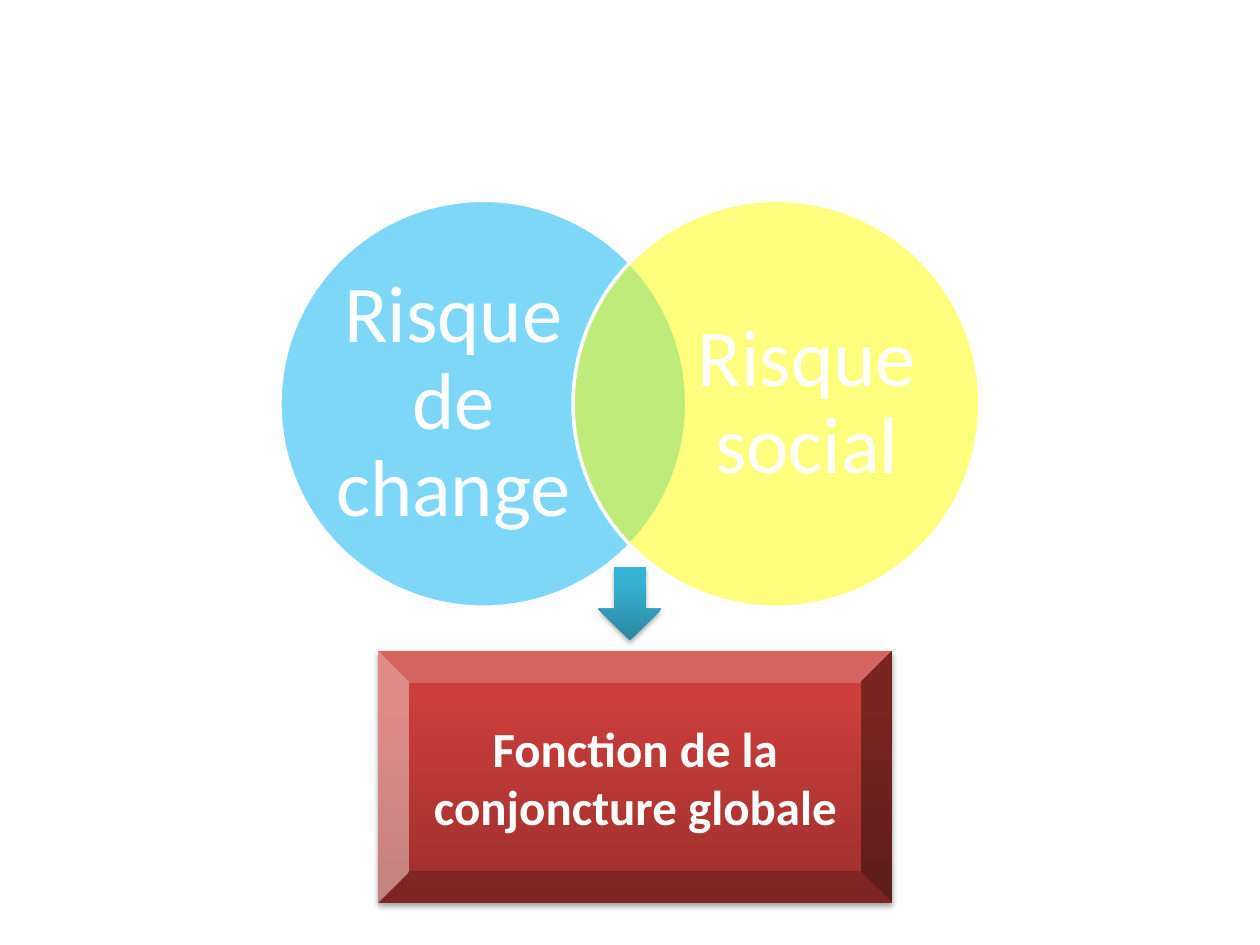
from lxml import etree
from pptx import Presentation
from pptx.dml.color import RGBColor
from pptx.enum import shapes, text
from pptx.oxml import ns
from pptx.util import Pt

WHITE = RGBColor(0xFF, 0xFF, 0xFF)
BLACK = RGBColor(0x00, 0x00, 0x00)
SKY = RGBColor(0x00, 0xB0, 0xF0)
YELLOW = RGBColor(0xFF, 0xFF, 0x00)
TEALS = [(0, RGBColor(0x2A, 0x88, 0xA2)), (80, RGBColor(0x37, 0xB1, 0xD2)),
         (100, RGBColor(0x34, 0xB4, 0xD6))]
REDS = [(0, RGBColor(0x9C, 0x2F, 0x2D)), (80, RGBColor(0xCB, 0x3E, 0x3A)),
        (100, RGBColor(0xCE, 0x3B, 0x37))]

CIRCLE_TOP, DIAMETER = 114.5, 232.5
LABEL_TOP, LABEL_WIDTH, LABEL_HEIGHT = 141.84, 134, 177.84


def add_child(parent, tag, **attributes):
    """Append a DrawingML element and return it."""
    child = etree.SubElement(parent, ns.qn(tag))
    for key, value in attributes.items():
        child.set(key, str(value))
    return child


def add_colour(parent, colour, alpha=None):
    """Append an RGB colour, with its opacity in percent if given."""
    element = add_child(parent, "a:srgbClr", val=colour)
    if alpha is not None:
        add_child(element, "a:alpha", val=alpha * 1000)


def write(frame, words, size, bold=False):
    """Write one centred white paragraph in the middle of a frame."""
    frame.word_wrap = True
    frame.vertical_anchor = text.MSO_ANCHOR.MIDDLE
    paragraph = frame.paragraphs[0]
    paragraph.alignment = text.PP_ALIGN.CENTER
    run = paragraph.add_run()
    run.text = words
    run.font.name = "Calibri"
    run.font.size = Pt(size)
    run.font.bold = bold
    run.font.color.rgb = WHITE
    return paragraph


def add_circle(slide, left, colour):
    """Add a half-transparent circle with a white outline."""
    circle = slide.shapes.add_shape(
        shapes.MSO_SHAPE.OVAL, Pt(left), Pt(CIRCLE_TOP), Pt(DIAMETER), Pt(DIAMETER))
    circle.shadow.inherit = False
    circle.fill.solid()
    circle.fill.fore_color.rgb = colour
    solid = circle.fill.fore_color
    solid.rgb = colour
    rgb = circle.element.spPr.find(ns.qn("a:solidFill"))[0]
    add_child(rgb, "a:alpha", val=50000)
    circle.line.color.rgb = WHITE
    circle.line.width = Pt(2)


def add_label(slide, left, words):
    """Add the large label of a circle."""
    label = slide.shapes.add_textbox(
        Pt(left), Pt(LABEL_TOP), Pt(LABEL_WIDTH), Pt(LABEL_HEIGHT))
    frame = label.text_frame
    frame.margin_left = frame.margin_right = 0
    frame.margin_top = frame.margin_bottom = 0
    paragraph = write(frame, words, 46)
    paragraph.line_spacing = 0.9


def add_glossy(slide, kind, left, top, width, height, stops):
    """Add a preset shape with a vertical gradient and a soft shadow."""
    glossy = slide.shapes.add_shape(kind, Pt(left), Pt(top), Pt(width), Pt(height))
    glossy.line.fill.background()
    glossy.fill.gradient()
    glossy.fill.gradient_angle = 90
    properties = glossy.element.spPr
    stop_list = properties.find(ns.qn("a:gradFill")).find(ns.qn("a:gsLst"))
    for stop in list(stop_list):
        stop_list.remove(stop)
    for position, colour in stops:
        add_colour(add_child(stop_list, "a:gs", pos=position * 1000), colour)
    effects = add_child(properties, "a:effectLst")
    shadow = add_child(effects, "a:outerShdw", blurRad=Pt(3.1), dist=Pt(1.8),
                       dir=90 * 60000, rotWithShape=0)
    add_colour(shadow, BLACK, 35)
    return glossy


def main():
    """Build the slide on exchange and social risk."""
    deck = Presentation()
    deck.slide_width, deck.slide_height = Pt(720), Pt(540)
    slide = deck.slides.add_slide(deck.slide_layouts[6])

    risks = [(160, SKY, 192, "Risque de change"),
             (327.5, YELLOW, 394, "Risque social")]
    for circle_left, colour, label_left, words in risks:
        add_circle(slide, circle_left, colour)
        add_label(slide, label_left, words)

    add_glossy(slide, shapes.MSO_SHAPE.DOWN_ARROW, 342, 324, 36, 42, TEALS)
    outcome = add_glossy(slide, shapes.MSO_SHAPE.BEVEL, 216, 372, 294, 144, REDS)
    write(outcome.text_frame, "Fonction de la conjoncture globale", 28, bold=True)

    deck.save("out.pptx")


if __name__ == "__main__":
    main()
